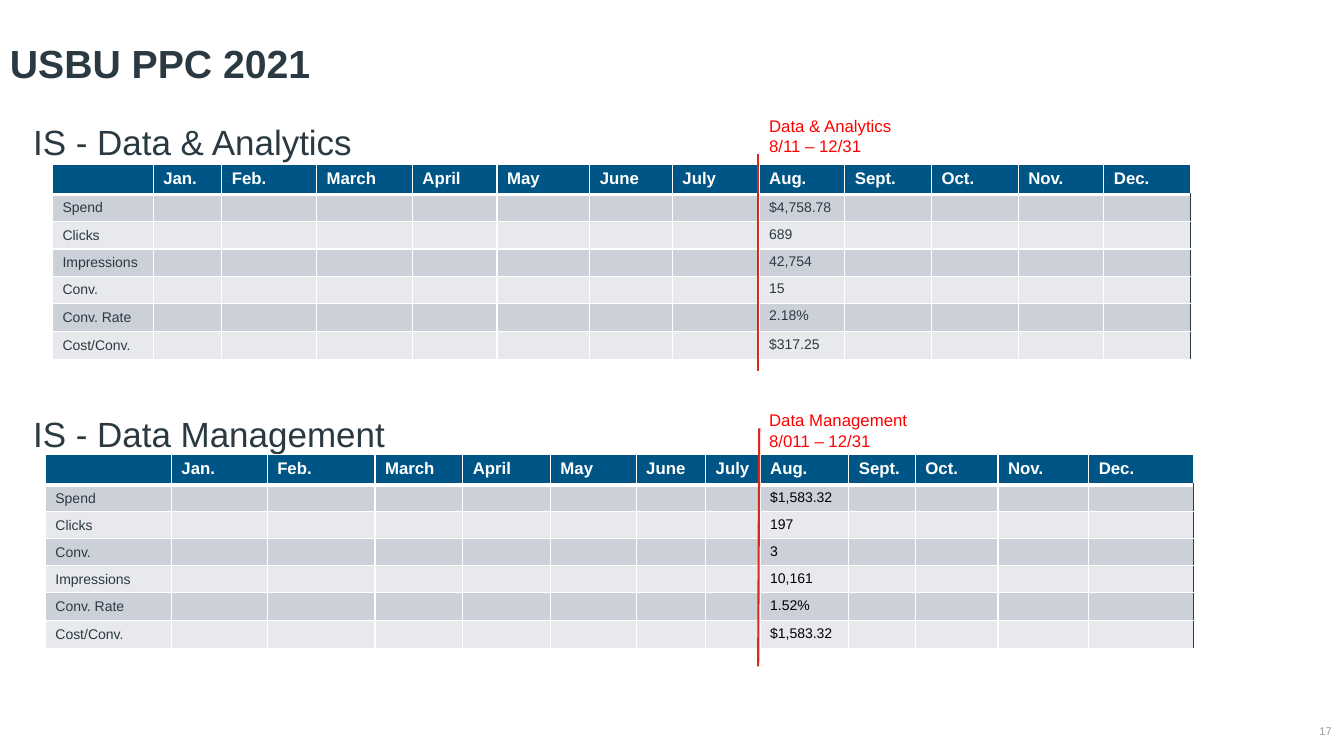
from lxml.etree import SubElement
from pptx import Presentation
from pptx.dml.color import RGBColor
from pptx.enum.shapes import MSO_CONNECTOR
from pptx.enum.text import MSO_ANCHOR, PP_ALIGN
from pptx.oxml.ns import qn
from pptx.util import Inches, Pt

COLORS = {
    "ink": "2B3A42",
    "number": "959CA0",
    "header": "005587",
    "dark_band": "CCD1D9",
    "light_band": "E7E9ED",
    "white": "FFFFFF",
    "black": "000000",
    "note": "FF0000",
    "marker": "DA291C",
}
GRID_COLUMN = Inches(13.33) // 1333
GRID_ROW = Inches(7.5) // 750
FONT = "Arial"
MONTHS = ["Jan.", "Feb.", "March", "April", "May", "June", "July",
          "Aug.", "Sept.", "Oct.", "Nov.", "Dec."]
AUGUST = MONTHS.index("Aug.") + 1

SECTIONS = [
    {
        "box": (23, 110, 1240, 258),
        "heading": "IS - Data & Analytics",
        "heading_top": 9,
        "line_spacing": 0.9,
        "note": ["Data & Analytics", "8/11 – 12/31"],
        "table_offset": (29, 53),
        "columns": [100, 68, 94, 95, 84, 92, 82, 86, 85, 86, 86, 85, 86],
        "rows": [29, 27, 27, 27, 27, 28, 28],
        "metrics": [("Spend", "$4,758.78"), ("Clicks", "689"),
                    ("Impressions", "42,754"), ("Conv.", "15"),
                    ("Conv. Rate", "2.18%"), ("Cost/Conv.", "$317.25")],
        "value_color": "ink",
        "marker": (729, 43, 729),
    },
    {
        "box": (23, 402, 1240, 259),
        "heading": "IS - Data Management",
        "heading_top": 2,
        "line_spacing": 1.0,
        "note": ["Data Management", "8/011 – 12/31"],
        "table_offset": (22, 49),
        "columns": [125, 95, 107, 87, 87, 85, 69, 54, 88, 66, 82, 90, 104],
        "rows": [29, 26, 26, 26, 26, 28, 28],
        "metrics": [("Spend", "$1,583.32"), ("Clicks", "197"),
                    ("Conv.", "3"), ("Impressions", "10,161"),
                    ("Conv. Rate", "1.52%"), ("Cost/Conv.", "$1,583.32")],
        "value_color": "black",
        "marker": (730, 23, 729),
    },
]


def rgb(name):
    return RGBColor.from_string(COLORS[name])


def place(left, top, width, height):
    return (left * GRID_COLUMN, top * GRID_ROW,
            width * GRID_COLUMN, height * GRID_ROW)


def style_font(font, size, color, bold=False):
    font.name = FONT
    font.size = Pt(size)
    font.bold = bold
    font.color.rgb = rgb(color)


def add_text(slide, box, lines, size, color, bold=False, spacing=1.0,
             anchor=MSO_ANCHOR.TOP, align=PP_ALIGN.LEFT, inset=True):
    frame = slide.shapes.add_textbox(*place(*box)).text_frame
    frame.word_wrap = True
    frame.vertical_anchor = anchor
    if not inset:
        frame.margin_left = frame.margin_right = 0
        frame.margin_top = frame.margin_bottom = 0
    frame.text = "\n".join(lines)
    for paragraph in frame.paragraphs:
        paragraph.alignment = align
        paragraph.line_spacing = spacing
        style_font(paragraph.font, size, color, bold)


def set_borders(cell, borders):
    properties = cell._tc.get_or_add_tcPr()
    for side, (color, width) in borders.items():
        line = SubElement(properties, qn(f"a:ln{side}"), w=str(Pt(width)))
        fill = SubElement(line, qn("a:solidFill"))
        SubElement(fill, qn("a:srgbClr"), val=COLORS[color])


def fill_cell(cell, text, size, color, band, borders, bold=False):
    set_borders(cell, borders)
    cell.fill.solid()
    cell.fill.fore_color.rgb = rgb(band)
    paragraph = cell.text_frame.paragraphs[0]
    if text:
        run = paragraph.add_run()
        run.text = text
        style_font(run.font, size, color, bold)
    else:
        SubElement(paragraph._p, qn("a:endParaRPr"), sz=str(size * 100))


def add_metrics_table(slide, left, top, section):
    columns, rows = section["columns"], section["rows"]
    box = place(left, top, sum(columns), sum(rows))
    table = slide.shapes.add_table(len(rows), len(columns), *box).table
    table.first_row = table.horz_banding = False
    for column, width in zip(table.columns, columns):
        column.width = width * GRID_COLUMN
    for row, height in zip(table.rows, rows):
        row.height = height * GRID_ROW

    thin, thick = ("white", 1), ("white", 3)
    for index, month in enumerate([""] + MONTHS):
        borders = {"L": thin, "R": thin, "T": thin, "B": thick}
        fill_cell(table.cell(0, index), month, 12, "white", "header", borders, True)
    for number, (metric, value) in enumerate(section["metrics"], start=1):
        band = "dark_band" if number % 2 else "light_band"
        for index in range(len(columns)):
            edge = ("ink", 1) if index == len(MONTHS) else thin
            borders = {"L": thin, "R": edge,
                       "T": thick if number == 1 else thin, "B": thin}
            text = {0: metric, AUGUST: value}.get(index, "")
            color = section["value_color"] if index == AUGUST else "ink"
            fill_cell(table.cell(number, index), text, 10, color, band, borders)
        table.cell(number, 0).vertical_anchor = MSO_ANCHOR.MIDDLE


def add_marker(slide, start, end):
    points = [start[0] * GRID_COLUMN, start[1] * GRID_ROW,
              end[0] * GRID_COLUMN, end[1] * GRID_ROW]
    marker = slide.shapes.add_connector(MSO_CONNECTOR.STRAIGHT, *points)
    marker.line.color.rgb = rgb("marker")
    marker.line.width = Pt(1.5)
    SubElement(marker._element.spPr, qn("a:effectLst"))


def add_section(slide, section):
    left, top, width, height = section["box"]
    add_text(slide, (left, top + section["heading_top"], width // 2, 52),
             [section["heading"]], 25, "ink", spacing=section["line_spacing"])
    table_left, table_top = section["table_offset"]
    add_metrics_table(slide, left + table_left, top + table_top, section)
    start_x, start_y, end_x = section["marker"]
    add_marker(slide, (left + start_x, top + start_y), (left + end_x, top + height))
    add_text(slide, (left + 730, top, 305, 50), section["note"], 12, "note")


def main():
    presentation = Presentation()
    presentation.slide_width = Inches(13.33)
    presentation.slide_height = Inches(7.5)
    slide = presentation.slides.add_slide(presentation.slide_layouts[6])
    add_text(slide, (0, 7, 1240, 84), ["USBU PPC 2021"], 28, "ink", bold=True,
             spacing=0.9, anchor=MSO_ANCHOR.BOTTOM)
    for section in SECTIONS:
        add_section(slide, section)
    add_text(slide, (1282, 716, 39, 19), ["17"], 8, "number",
             anchor=MSO_ANCHOR.MIDDLE, align=PP_ALIGN.RIGHT, inset=False)
    presentation.save("out.pptx")


if __name__ == "__main__":
    main()
